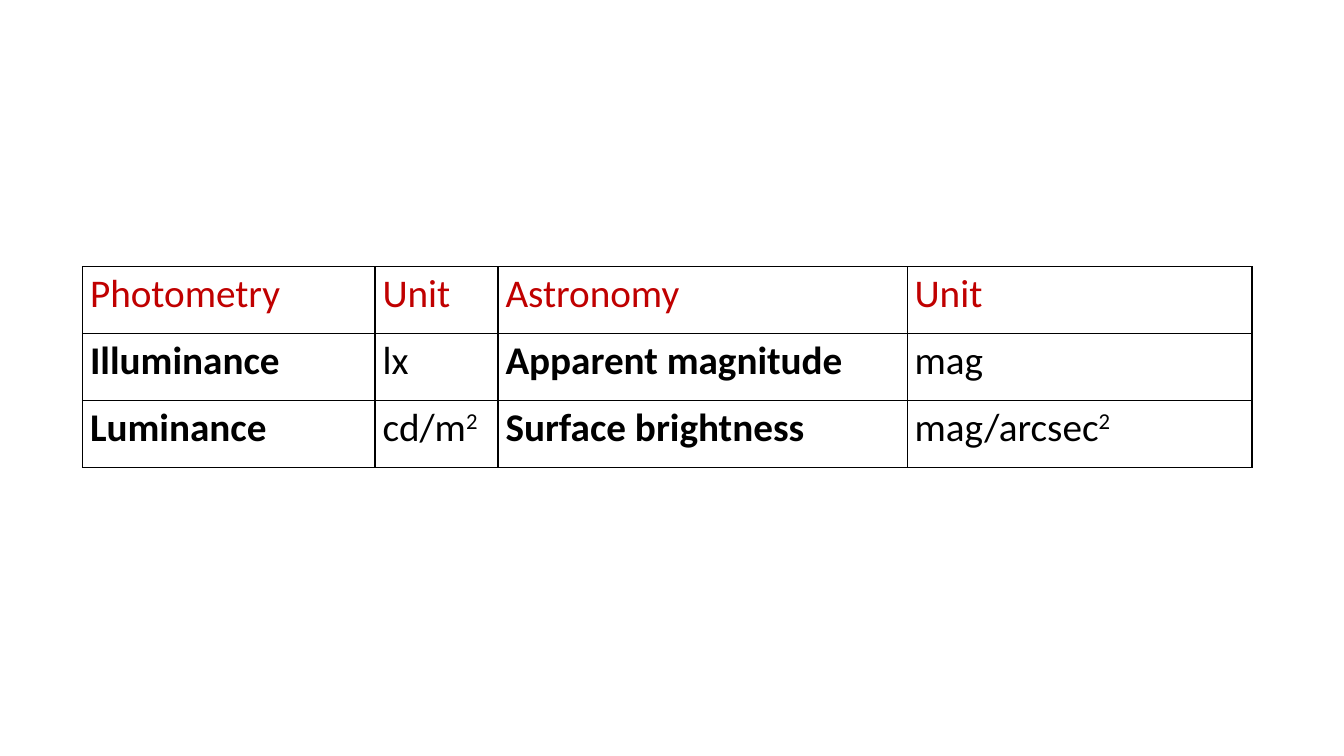
from lxml.etree import SubElement
from pptx import Presentation
from pptx.dml.color import RGBColor
from pptx.oxml.ns import qn
from pptx.util import Cm, Pt

RED = RGBColor(0xC0, 0x00, 0x00)
BLACK = RGBColor(0x00, 0x00, 0x00)

COLUMN_WIDTHS = [7.37, 3.1, 10.31, 8.69]
ROW_HEIGHT = 1.69
# Each cell is a tuple of its base text and an optional superscript.
ROWS = [
    [("Photometry",), ("Unit",), ("Astronomy",), ("Unit",)],
    [("Illuminance",), ("lx",), ("Apparent magnitude",), ("mag",)],
    [("Luminance",), ("cd/m", "2"), ("Surface brightness",), ("mag/arcsec", "2")],
]


class SlideBuilder:
    font_name = "Calibri"
    font_size = Pt(28)
    border_width = Pt(1)

    def __init__(self, slide):
        self.slide = slide

    def add_table(self, left, top, rows, column_widths, row_height):
        frame = self.slide.shapes.add_table(
            len(rows), len(column_widths), Cm(left), Cm(top),
            Cm(sum(column_widths)), Cm(row_height * len(rows)))
        table = frame.table
        table.first_row = table.horz_banding = False
        for column, width in zip(table.columns, column_widths):
            column.width = Cm(width)
        for row_index, texts in enumerate(rows):
            table.rows[row_index].height = Cm(row_height)
            for column_index, parts in enumerate(texts):
                is_header = row_index == 0
                is_quantity = not is_header and column_index % 2 == 0
                cell = table.cell(row_index, column_index)
                self.format_cell(cell)
                self.write_cell(cell, parts, RED if is_header else BLACK, is_quantity)

    def format_cell(self, cell):
        cell.margin_left = cell.margin_right = Cm(0.19)
        cell.margin_top = cell.margin_bottom = 0
        properties = cell._tc.get_or_add_tcPr()
        for side in ("a:lnL", "a:lnR", "a:lnT", "a:lnB"):
            line = SubElement(properties, qn(side), w=str(self.border_width))
            fill = SubElement(line, qn("a:solidFill"))
            SubElement(fill, qn("a:srgbClr"), val=str(BLACK))
        cell.fill.background()

    def write_cell(self, cell, parts, color, bold):
        paragraph = cell.text_frame.paragraphs[0]
        paragraph.line_spacing = 1.07
        for index, text in enumerate(parts):
            run = paragraph.add_run()
            run.text = text
            font = run.font
            font.name = self.font_name
            font.size = self.font_size
            font.bold = bold
            font.color.rgb = color
            if index > 0:
                font._element.set("baseline", "30000")


def main():
    presentation = Presentation()
    presentation.slide_width = Cm(33.87)
    presentation.slide_height = Cm(19.05)
    blank_layout = presentation.slide_layouts[6]
    builder = SlideBuilder(presentation.slides.add_slide(blank_layout))
    builder.add_table(2.08, 6.72, ROWS, COLUMN_WIDTHS, ROW_HEIGHT)
    presentation.save("out.pptx")


if __name__ == "__main__":
    main()
